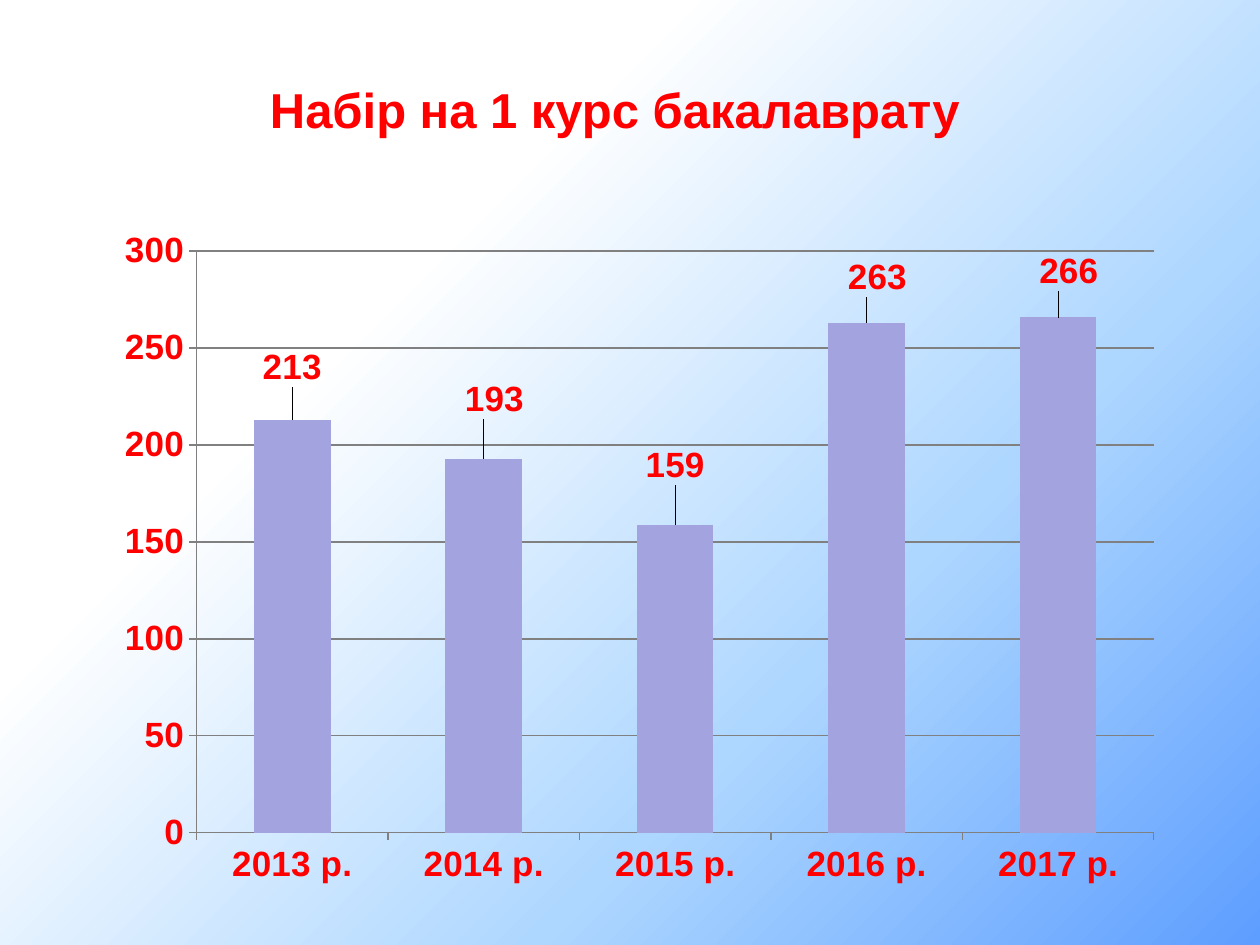
from pptx import Presentation
from pptx import util as u
from pptx.chart import data as chart_data
from pptx.dml.color import RGBColor
from pptx.enum import chart as c, text
from pptx.oxml import parse_xml
from pptx.oxml.ns import nsdecls, qn

RED = RGBColor(0xFF, 0x00, 0x00)
LAVENDER = RGBColor(0xA3, 0xA3, 0xE0)
GREY = RGBColor(0x80, 0x80, 0x80)
BLUE = RGBColor(0x5E, 0x9E, 0xFF)
SKY = RGBColor(0xAE, 0xD7, 0xFF)
WHITE = RGBColor(0xFF, 0xFF, 0xFF)
FONT = "Arial"

# Position, colour and opacity in percent
GRADIENT = [(0, BLUE, 52), (33, SKY, 70), (69, WHITE, 100), (100, WHITE, 0)]

# Year, first-year intake, label shift as a fraction of the chart
INTAKE = [
    ("2013 р.", 213, (0, -0.04)),
    ("2014 р.", 193, (0.01, -0.05)),
    ("2015 р.", 159, (0, -0.05)),
    ("2016 р.", 263, (0.01, -0.03)),
    ("2017 р.", 266, (0.01, -0.03)),
]


def style_font(font, size):
    font.name = FONT
    font.size = u.Pt(size)
    font.bold = True
    font.color.rgb = RED


def add_background(slide):
    stops = "".join(
        f'<a:gs pos="{position * 1000}"><a:srgbClr val="{colour}">'
        f'<a:alpha val="{opacity * 1000}"/></a:srgbClr></a:gs>'
        for position, colour, opacity in GRADIENT)
    background = parse_xml(
        f'<p:bg {nsdecls("p", "a")}><p:bgPr><a:gradFill><a:gsLst>{stops}</a:gsLst>'
        '<a:path path="circle"><a:fillToRect l="100000" t="100000"/></a:path>'
        '</a:gradFill><a:effectLst/></p:bgPr></p:bg>')
    slide._element.cSld.insert(0, background)


def add_title(slide, left, top, width, height):
    box = slide.shapes.add_textbox(u.Pt(left), u.Pt(top), u.Pt(width), u.Pt(height))
    frame = box.text_frame
    frame.text = "Набір на 1 курс бакалаврату"
    frame.word_wrap = False
    frame.auto_size = text.MSO_AUTO_SIZE.SHAPE_TO_FIT_TEXT
    paragraph = frame.paragraphs[0]
    paragraph.alignment = text.PP_ALIGN.CENTER
    style_font(paragraph.runs[0].font, 28)


def manual_layout(**settings):
    items = "".join(f'<c:{name} val="{value}"/>' for name, value in settings.items())
    return parse_xml(f'<c:layout {nsdecls("c")}><c:manualLayout>{items}'
                     '</c:manualLayout></c:layout>')


def style_axis(axis):
    axis.major_tick_mark = c.XL_TICK_MARK.OUTSIDE
    axis.minor_tick_mark = c.XL_TICK_MARK.NONE
    axis.format.line.color.rgb = GREY
    style_font(axis.tick_labels.font, 20)


def add_intake_chart(slide, left, top, width, height):
    data = chart_data.CategoryChartData()
    data.categories = [year for year, _, _ in INTAKE]
    data.add_series("Series 1", [value for _, value, _ in INTAKE])
    chart = slide.shapes.add_chart(
        c.XL_CHART_TYPE.COLUMN_CLUSTERED,
        u.Pt(left), u.Pt(top), u.Pt(width), u.Pt(height), data).chart
    chart.has_title = False
    chart.has_legend = False
    chart.font.name = FONT
    chart.font.size = u.Pt(10)

    # Axes and gridlines
    style_axis(chart.category_axis)
    axis = chart.value_axis
    style_axis(axis)
    axis.minimum_scale, axis.maximum_scale, axis.major_unit = 0, 300, 50
    axis.has_major_gridlines = True
    axis.major_gridlines.format.line.color.rgb = GREY

    # Columns
    plot = chart.plots[0]
    plot.gap_width = 150
    plot.vary_by_categories = False
    series = plot.series[0]
    series.format.fill.solid()
    series.format.fill.fore_color.rgb = LAVENDER
    series.format.line.fill.background()

    # Value labels, each nudged off its column
    for index in range(len(INTAKE)):
        label = series.points[index].data_label
        label.position = c.XL_LABEL_POSITION.OUTSIDE_END
        style_font(label.font, 20)
    labels = chart._chartSpace.iter(qn("c:dLbl"))
    for label, (_, _, (x, y)) in zip(labels, INTAKE):
        label.find(qn("c:idx")).addnext(manual_layout(x=x, y=y))

    # Plot area
    area = next(chart._chartSpace.iter(qn("c:plotArea")))
    for layout in area.findall(qn("c:layout")):
        area.remove(layout)
    area.insert(0, manual_layout(
        layoutTarget="inner", xMode="edge", yMode="edge",
        x=0.087, y=0.049, w=0.893, h=0.855))


def main():
    presentation = Presentation()
    presentation.slide_width = u.Pt(720)
    presentation.slide_height = u.Pt(540)
    slide = presentation.slides.add_slide(presentation.slide_layouts[6])
    add_background(slide)
    add_intake_chart(slide, 59, 124.5, 612.7, 388.8)
    add_title(slide, 144.7, 41.8, 413.3, 41)
    presentation.save("out.pptx")


if __name__ == "__main__":
    main()
